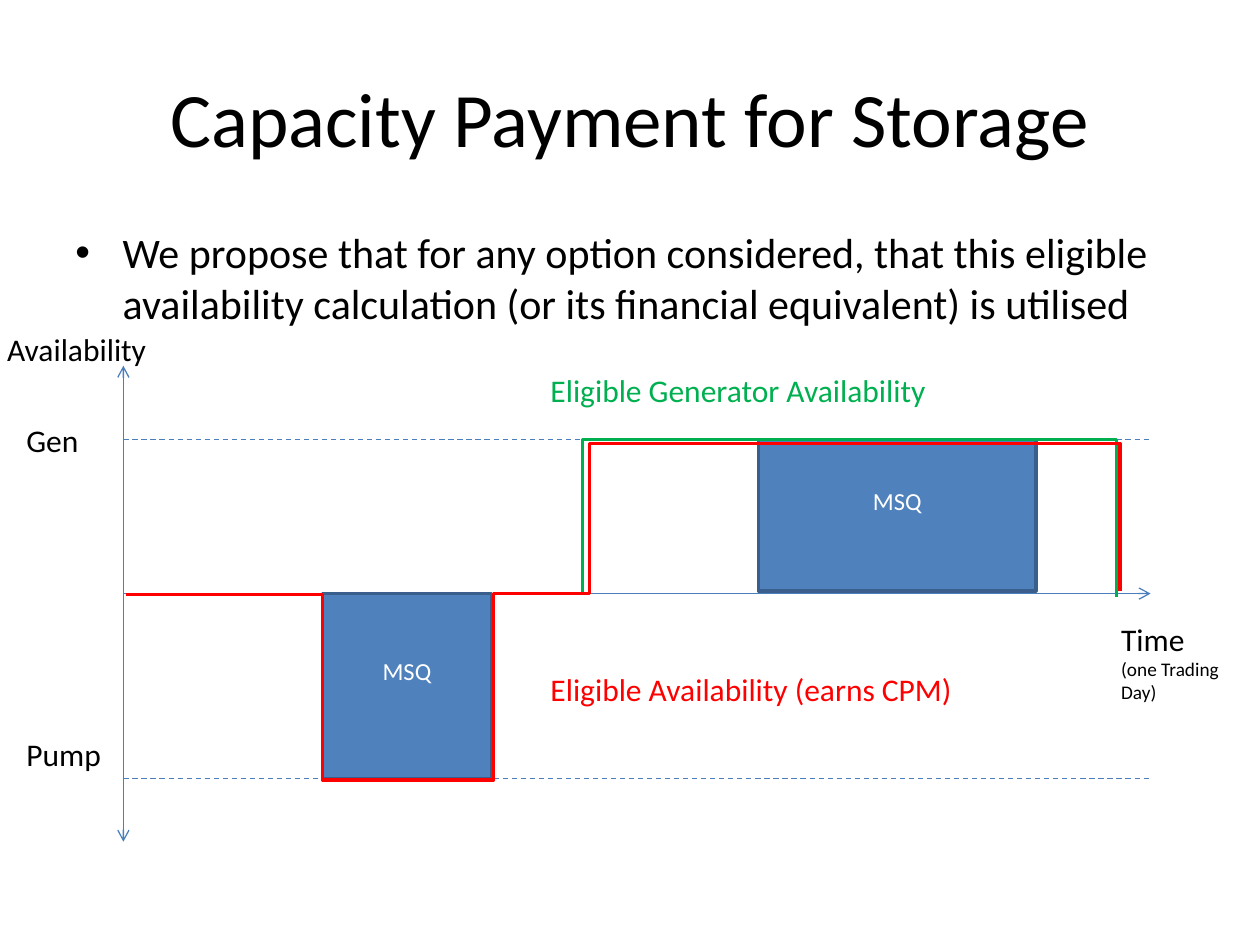
from pptx import Presentation
from pptx.util import Pt
from pptx.dml.color import RGBColor
from pptx.enum.dml import MSO_LINE
from pptx.enum.shapes import MSO_CONNECTOR, MSO_SHAPE
from pptx.enum.text import MSO_ANCHOR, PP_ALIGN
from pptx.oxml.ns import qn
from lxml.etree import SubElement

# Content
TITLE = "Capacity Payment for Storage"
BULLET = ("We propose that for any option considered, that this eligible "
          "availability calculation (or its financial equivalent) is utilised")
BLACK, WHITE, GREEN, RED = "000000", "FFFFFF", "00B050", "FF0000"
BLUE, EDGE, AXIS = "4F81BD", "3A5F8C", "4B7EBC"

# Chart levels and edges, in points
LEFT, RIGHT, TOP, BOTTOM = 70.5, 657.5, 209, 481
GEN, ZERO, PUMP = 251.3, 339.2, 445
PUMP_ON, PUMP_OFF, GEN_ON, GEN_OFF = 184.3, 282, 333, 638

# (x1, y1, x2, y2, ends with arrows, dashed)
AXES = [(LEFT, TOP, LEFT, BOTTOM, ("headEnd", "tailEnd"), False),
        (LEFT, ZERO, RIGHT, ZERO, ("tailEnd",), False)]
LEVELS = [(LEFT, y, RIGHT, y, (), True) for y in (GEN, PUMP)]

# (left, top, width, height)
MSQ_PUMP = (PUMP_ON, ZERO, 96.5, PUMP - ZERO)
MSQ_GEN = (433.5, GEN, 158.5, 86.4)

GENERATOR = [(GEN_ON, 339.7), (GEN_ON, GEN), (GEN_OFF, GEN), (GEN_OFF, 341)]
ELIGIBLE = [(72, 339.8), (PUMP_ON, 339.8), (PUMP_ON, 445.7), (PUMP_OFF, 445.7),
            (PUMP_OFF, ZERO), (337, ZERO), (337, 253.5), (640, 253.5), (640, 337.7)]

# (left, top, width, height, colour, [(text, size)])
LABELS = [
    (-3, 185.3, 114, 29, BLACK, [("Availability", 18)]),
    (633.6, 350.5, 72, 55.5, BLACK, [("Time ", 18), ("(one Trading Day)", 11)]),
    (8, 237, 62.5, 29, BLACK, [("Gen", 18)]),
    (8, 416.2, 62.5, 29, BLACK, [("Pump", 18)]),
    (307.5, 208.2, 263, 29, GREEN, [("Eligible Generator Availability", 18)]),
    (307.5, 379.6, 263, 29, RED, [("Eligible Availability (earns CPM)", 18)]),
]


def rgb(value):
    return RGBColor.from_string(value)


def add_run(p, text, size, color):
    r = p.add_run()
    r.text = text
    for name, value in {"name": "Calibri", "size": Pt(size)}.items():
        setattr(r.font, name, value)
    r.font.color.rgb = rgb(color)


def set_line(sp, color, width):
    sp.line.color.rgb = rgb(color)
    sp.line.width = Pt(width)


def add_text(s, box, color, runs):
    tf = s.shapes.add_textbox(*map(Pt, box)).text_frame
    tf.word_wrap = True
    for text, size in runs:
        add_run(tf.paragraphs[0], text, size, color)
    return tf.paragraphs[0]


def add_line(s, x1, y1, x2, y2, arrows, dashed):
    sp = s.shapes.add_connector(MSO_CONNECTOR.STRAIGHT, *map(Pt, (x1, y1, x2, y2)))
    set_line(sp, AXIS, 0.75)
    if dashed:
        sp.line.dash_style = MSO_LINE.DASH
    ln = sp.line._get_or_add_ln()
    for end in arrows:
        SubElement(ln, qn("a:" + end), type="arrow")
    SubElement(sp._element.spPr, qn("a:effectLst"))


def add_block(s, box):
    sp = s.shapes.add_shape(MSO_SHAPE.RECTANGLE, *map(Pt, box))
    sp.shadow.inherit = False
    sp.fill.solid()
    sp.fill.fore_color.rgb = rgb(BLUE)
    set_line(sp, EDGE, 2)
    tf = sp.text_frame
    tf.vertical_anchor = MSO_ANCHOR.MIDDLE
    tf.margin_bottom = Pt(20.6)  # lifts the label above the middle
    tf.paragraphs[0].alignment = PP_ALIGN.CENTER
    add_run(tf.paragraphs[0], "MSQ", 14, WHITE)


def add_profile(s, points, color):
    start, *rest = [(Pt(x), Pt(y)) for x, y in points]
    builder = s.shapes.build_freeform(*start)
    builder.add_line_segments(rest, close=False)
    sp = builder.convert_to_shape()
    sp.shadow.inherit = False
    sp.fill.background()
    set_line(sp, color, 2)


def main():
    prs = Presentation()
    prs.slide_width, prs.slide_height = Pt(720), Pt(540)
    s = prs.slides.add_slide(prs.slide_layouts[5])

    # Title
    title = s.shapes.title
    title.left, title.top, title.width, title.height = map(Pt, (36, 21.6, 648, 90))
    title.text_frame.vertical_anchor = MSO_ANCHOR.MIDDLE
    p = title.text_frame.paragraphs[0]
    p.alignment = PP_ALIGN.CENTER
    add_run(p, TITLE, 44, BLACK)

    # Bullet
    p = add_text(s, (36, 126, 648, 356.4), BLACK, [(BULLET, 24)])
    pPr = p._p.get_or_add_pPr()
    pPr.set("marL", str(Pt(27)))
    pPr.set("indent", str(Pt(-27)))
    SubElement(pPr, qn("a:buFont"), typeface="Arial")
    SubElement(pPr, qn("a:buChar"), char="•")

    # Diagram, from back to front
    for line in AXES:
        add_line(s, *line)
    add_block(s, MSQ_PUMP)
    for line in LEVELS:
        add_line(s, *line)
    add_block(s, MSQ_GEN)
    add_profile(s, GENERATOR, GREEN)
    add_profile(s, ELIGIBLE, RED)
    for *box, color, runs in LABELS:
        add_text(s, box, color, runs)

    prs.save("out.pptx")


if __name__ == "__main__":
    main()
